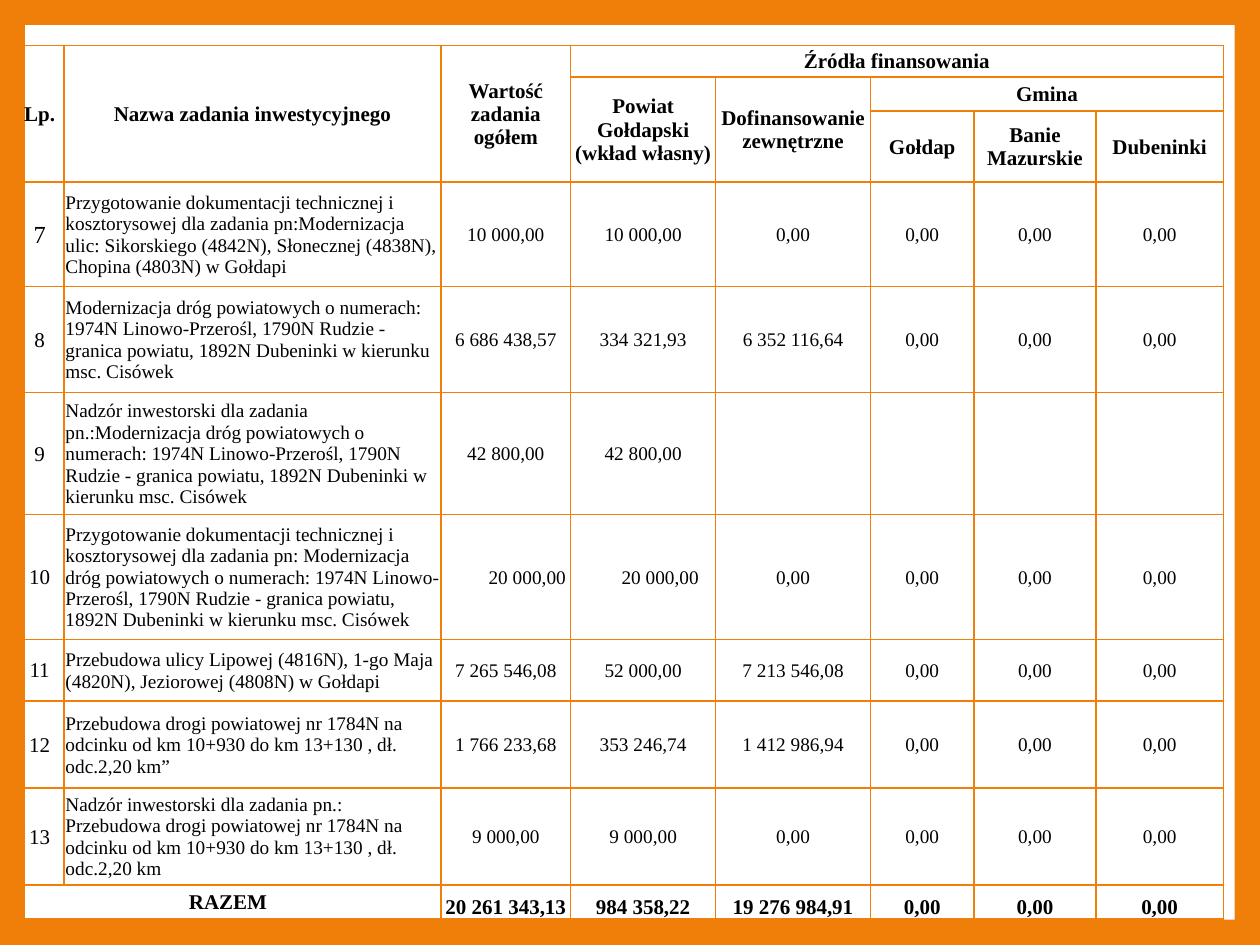
"""Build the slide with the table of investment tasks and their funding."""
import pptx
import pptx.util
import pptx.dml.color
import pptx.enum.shapes
import pptx.enum.text
import pptx.oxml
import pptx.oxml.ns
from pptx.util import Inches

ORANGE = pptx.dml.color.RGBColor(0xF0, 0x7F, 0x09)
WHITE = pptx.dml.color.RGBColor(0xFF, 0xFF, 0xFF)
BLACK = pptx.dml.color.RGBColor(0, 0, 0)
FONT = "Times New Roman"
ALIGN = pptx.enum.text.PP_ALIGN
ANCHOR = pptx.enum.text.MSO_ANCHOR

WIDTHS = [0.39, 2.99, 1.03, 1.15, 1.23, 0.82, 0.97, 1.01]
HEIGHTS = [0.25, 0.27, 0.55, 0.83, 0.84, 0.97, 0.99, 0.49, 0.69, 0.77, 0.27]
HEADS = [
    (0, 0, 2, 0, "Lp."),
    (0, 1, 2, 1, "Nazwa zadania inwestycyjnego"),
    (0, 2, 2, 2, "Wartość zadania ogółem"),
    (0, 3, 0, 7, "Źródła finansowania"),
    (1, 3, 2, 3, "Powiat Gołdapski (wkład własny)"),
    (1, 4, 2, 4, "Dofinansowanie zewnętrzne"),
    (1, 5, 1, 7, "Gmina"),
    (2, 5, 2, 5, "Gołdap"),
    (2, 6, 2, 6, "Banie Mazurskie"),
    (2, 7, 2, 7, "Dubeninki"),
]
ZEROS = ["0,00"] * 3
TASKS = [
    ["Przygotowanie dokumentacji technicznej i kosztorysowej dla zadania "
     "pn:Modernizacja ulic: Sikorskiego (4842N), Słonecznej (4838N), "
     "Chopina (4803N) w Gołdapi",
     "10 000,00", "10 000,00", "0,00", *ZEROS],
    ["Modernizacja dróg powiatowych o numerach: 1974N Linowo-Przerośl, "
     "1790N Rudzie - granica powiatu, 1892N Dubeninki w kierunku msc. Cisówek",
     "6 686 438,57", "334 321,93", "6 352 116,64", *ZEROS],
    ["Nadzór inwestorski dla zadania pn.:Modernizacja dróg powiatowych o "
     "numerach: 1974N Linowo-Przerośl, 1790N Rudzie - granica powiatu, "
     "1892N Dubeninki w kierunku msc. Cisówek",
     "42 800,00", "42 800,00"],
    ["Przygotowanie dokumentacji technicznej i kosztorysowej dla zadania pn: "
     "Modernizacja dróg powiatowych o numerach: 1974N Linowo-Przerośl, "
     "1790N Rudzie - granica powiatu, 1892N Dubeninki w kierunku msc. Cisówek",
     "20 000,00", "20 000,00", "0,00", *ZEROS],
    ["Przebudowa ulicy Lipowej (4816N), 1-go Maja (4820N), "
     "Jeziorowej (4808N) w Gołdapi",
     "7 265 546,08", "52 000,00", "7 213 546,08", *ZEROS],
    ["Przebudowa drogi powiatowej nr 1784N na odcinku od km 10+930 "
     "do km 13+130 , dł. odc.2,20 km”",
     "1 766 233,68", "353 246,74", "1 412 986,94", *ZEROS],
    ["Nadzór inwestorski dla zadania pn.: Przebudowa drogi powiatowej "
     "nr 1784N na odcinku od km 10+930 do km 13+130 , dł. odc.2,20 km",
     "9 000,00", "9 000,00", "0,00", *ZEROS],
]
SUMS = ["20 261 343,13", "984 358,22", "19 276 984,91", *ZEROS]


def frame(cell):
    props = cell._tc.get_or_add_tcPr()
    for side in "LRTB":
        props.append(pptx.oxml.parse_xml(
            f'<a:ln{side} {pptx.oxml.ns.nsdecls("a")} w="12700">'
            f'<a:solidFill><a:srgbClr val="{ORANGE}"/></a:solidFill>'
            f'</a:ln{side}>'))
    cell.fill.background()
    cell.margin_left = cell.margin_right = cell.margin_top = Inches(0.01)
    cell.margin_bottom = 0
    cell.vertical_anchor = ANCHOR.MIDDLE


def write(cell, text, size, bold=False, align=ALIGN.CENTER):
    cell.text_frame.text = text
    para = cell.text_frame.paragraphs[0]
    para.alignment = align
    font = para.runs[0].font
    font.name = FONT
    font.size = pptx.util.Pt(size)
    font.bold = bold
    font.color.rgb = BLACK


deck = pptx.Presentation()
deck.slide_width, deck.slide_height = Inches(10), Inches(7.5)
slide = deck.slides.add_slide(deck.slide_layouts[6])
slide.background.fill.solid()
slide.background.fill.fore_color.rgb = ORANGE

page = slide.shapes.add_shape(
    pptx.enum.shapes.MSO_SHAPE.RECTANGLE,
    Inches(0.2), Inches(0.2), Inches(9.6), Inches(7.1))
page.shadow.inherit = False
page.fill.solid()
page.fill.fore_color.rgb = WHITE
page.line.fill.background()

table = slide.shapes.add_table(
    len(HEIGHTS), len(WIDTHS),
    Inches(0.12), Inches(0.36), Inches(9.61), Inches(6.93)).table
table.first_row = table.horz_banding = False
for col, width in zip(table.columns, WIDTHS):
    col.width = Inches(width)
for row, height in zip(table.rows, HEIGHTS):
    row.height = Inches(height)
for cell in table.iter_cells():
    frame(cell)

for top, left, low, right, text in HEADS:
    cell = table.cell(top, left)
    if (top, left) != (low, right):
        cell.merge(table.cell(low, right))
    write(cell, text, 12, bold=True)

for row, (name, *sums) in enumerate(TASKS, 3):
    write(table.cell(row, 0), str(row + 4), 14 if row == 3 else 12)
    write(table.cell(row, 1), name, 11, align=ALIGN.LEFT)
    for col, text in enumerate(sums, 2):
        write(table.cell(row, col), text, 11)
table.cell(6, 2).margin_left = Inches(0.35)
table.cell(6, 3).margin_left = Inches(0.28)

last = len(HEIGHTS) - 1
table.cell(last, 0).merge(table.cell(last, 1))
write(table.cell(last, 0), "RAZEM", 12, bold=True)
for col, text in enumerate(SUMS, 2):
    write(table.cell(last, col), text, 12, bold=True)
    table.cell(last, col).vertical_anchor = ANCHOR.BOTTOM

deck.save("out.pptx")
